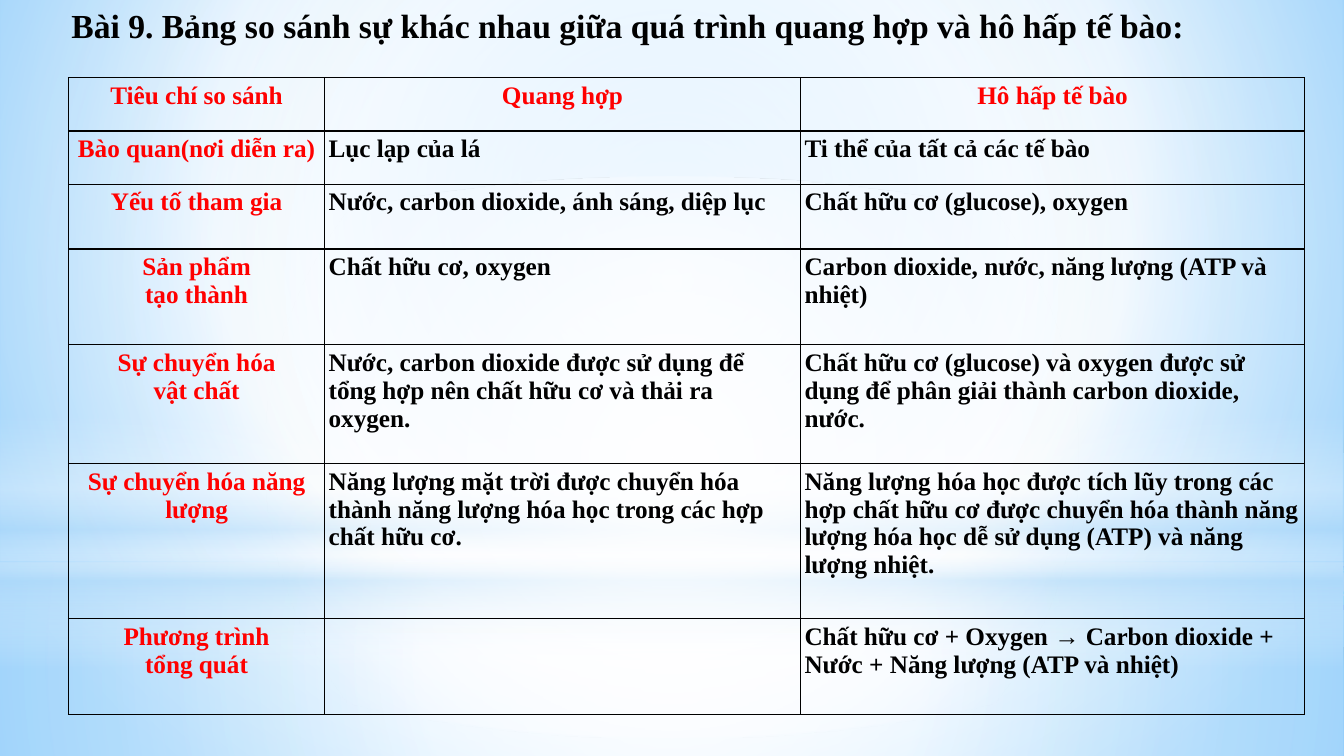
"""Build a slide comparing photosynthesis with cellular respiration."""
from lxml import etree
from pptx import Presentation
from pptx import util as u
from pptx.dml.color import RGBColor
from pptx.enum import shapes, text
from pptx.oxml.ns import qn

RED = RGBColor(0xFF, 0x00, 0x00)
BLACK = RGBColor(0x00, 0x00, 0x00)
WHITE = RGBColor(0xFF, 0xFF, 0xFF)
PALE = RGBColor(0xB4, 0xDC, 0xFA)
SKY = RGBColor(0x9E, 0xD5, 0xFF)
BLUE = RGBColor(0x5B, 0xB9, 0xFF)
FONT = "Times New Roman"

TITLE = "Bài 9. Bảng so sánh sự khác nhau giữa quá trình quang hợp và hô hấp tế bào:"
COLS = [2.54, 4.72, 5]
ROWS = [
    (0.53, "Tiêu chí so sánh", "Quang hợp", "Hô hấp tế bào"),
    (0.53, "Bào quan(nơi diễn ra)", "Lục lạp của lá", "Ti thể của tất cả các tế bào"),
    (0.64, "Yếu tố tham gia", "Nước, carbon dioxide, ánh sáng, diệp lục",
     "Chất hữu cơ (glucose), oxygen"),
    (0.95, "Sản phẩm\ntạo thành", "Chất hữu cơ, oxygen",
     "Carbon dioxide, nước, năng lượng (ATP và nhiệt)"),
    (1.18, "Sự chuyển hóa\nvật chất",
     "Nước, carbon dioxide được sử dụng để tổng hợp nên chất hữu cơ và thải ra oxygen.",
     "Chất hữu cơ (glucose) và oxygen được sử dụng để phân giải thành carbon dioxide, nước."),
    (1.54, "Sự chuyển hóa năng lượng",
     "Năng lượng mặt trời được chuyển hóa thành năng lượng hóa học trong các hợp chất hữu cơ.",
     "Năng lượng hóa học được tích lũy trong các hợp chất hữu cơ được chuyển hóa thành "
     "năng lượng hóa học dễ sử dụng (ATP) và năng lượng nhiệt."),
    (0.95, "Phương trình\ntổng quát", "",
     "Chất hữu cơ + Oxygen → Carbon dioxide + Nước + Năng lượng (ATP và nhiệt)"),
]

CENTER = (50, 50, 50, 50)
BACKGROUND = [(0, SKY, 100), (60, WHITE, 100), (100, BLUE, 100)]
RECT, OVAL = shapes.MSO_SHAPE.RECTANGLE, shapes.MSO_SHAPE.OVAL
GLOWS = [
    (RECT, 5.58, 1.92, CENTER, [(0, WHITE, 91), (37, WHITE, 76), (100, PALE, 79)]),
    (RECT, 0, 5.58, CENTER, [(0, WHITE, 89), (48, WHITE, 62), (100, PALE, 79)]),
    (RECT, 4.12, 2.5, None, [(0, WHITE, 0), (29, WHITE, 30), (45, PALE, 40),
                             (55, WHITE, 26), (65, PALE, 60), (100, WHITE, 0)]),
    (OVAL, 1.75, 5.58, CENTER, [(0, WHITE, 100), (56, WHITE, 0)]),
]


def add(parent, tag, **attrs):
    return etree.SubElement(parent, qn(tag), {k: str(v) for k, v in attrs.items()})


def paint(fill, holder, stops, focus):
    fill.solid()
    solid = holder.find(qn("a:solidFill"))
    grad = etree.Element(qn("a:gradFill"), rotWithShape="1")
    stop_list = add(grad, "a:gsLst")
    for pos, color, opacity in stops:
        stop = add(stop_list, "a:gs", pos=pos * 1000)
        clr = add(stop, "a:srgbClr", val=color)
        if opacity < 100:
            add(clr, "a:alpha", val=opacity * 1000)
    if focus:
        sides = {side: v * 1000 for side, v in zip("ltrb", focus)}
        add(add(grad, "a:path", path="circle"), "a:fillToRect", **sides)
    else:
        add(grad, "a:lin", ang=90 * 60000, scaled=0)
    holder.replace(solid, grad)


def style(tf, size, color, align):
    for p in tf.paragraphs:
        p.alignment = align
        for r in p.runs:
            r.font.color.rgb = color
            for name, value in {"name": FONT, "size": u.Pt(size), "bold": True}.items():
                setattr(r.font, name, value)


def add_borders(cell):
    tc_pr = cell._tc.get_or_add_tcPr()
    for tag in ("a:lnL", "a:lnR", "a:lnT", "a:lnB"):
        line = add(tc_pr, tag, w=u.Pt(1))
        add(add(line, "a:solidFill"), "a:srgbClr", val=BLACK)


def add_table(s):
    heights = [row[0] for row in ROWS]
    tbl = s.shapes.add_table(len(ROWS), len(COLS), u.Inches(0.68), u.Inches(0.77),
                             u.Inches(sum(COLS)), u.Inches(sum(heights))).table
    tbl.first_row = tbl.horz_banding = False
    for col, width in zip(tbl.columns, COLS):
        col.width = u.Inches(width)
    for i, (height, *words) in enumerate(ROWS):
        tbl.rows[i].height = u.Inches(height)
        for j, word in enumerate(words):
            cell = tbl.cell(i, j)
            cell.text = word
            for side in ("left", "right", "top", "bottom"):
                setattr(cell, f"margin_{side}", u.Inches(0.04))
            heading = i == 0 or j == 0
            align = text.PP_ALIGN.CENTER if heading else text.PP_ALIGN.LEFT
            style(cell.text_frame, 18, RED if heading else BLACK, align)
            add_borders(cell)
            cell.fill.background()


def main():
    prs = Presentation()
    prs.slide_width, prs.slide_height = u.Inches(13.33), u.Inches(7.5)
    s = prs.slides.add_slide(prs.slide_layouts[6])
    fill = s.background.fill
    paint(fill, s._element.cSld.bg.bgPr, BACKGROUND, (20, 10, 20, 60))
    for kind, top, height, focus, stops in GLOWS:
        sp = s.shapes.add_shape(kind, 0, u.Inches(top), prs.slide_width, u.Inches(height))
        sp.shadow.inherit = False
        sp.line.fill.background()
        paint(sp.fill, sp._element.spPr, stops, focus)
    add_table(s)
    box = s.shapes.add_textbox(u.Inches(0.61), 0, u.Inches(12.34), u.Inches(0.5))
    tf = box.text_frame
    tf.word_wrap = True
    tf.auto_size = text.MSO_AUTO_SIZE.SHAPE_TO_FIT_TEXT
    tf.text = TITLE
    style(tf, 24, BLACK, text.PP_ALIGN.LEFT)
    prs.save("out.pptx")


if __name__ == "__main__":
    main()
